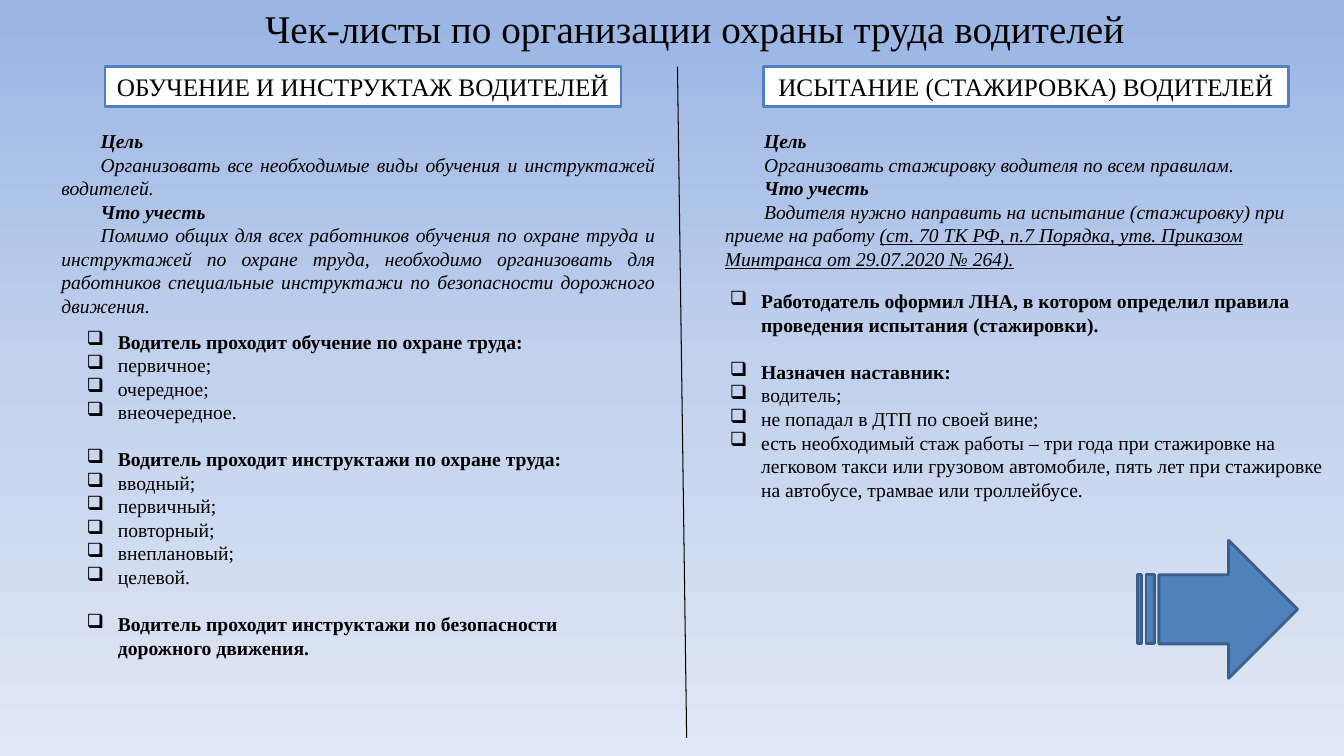
import copy

import pptx
import pptx.dml.color
import pptx.enum.shapes
import pptx.enum.text
import pptx.oxml
import pptx.oxml.ns
import pptx.util

RGBColor = pptx.dml.color.RGBColor
BLACK = RGBColor(0x00, 0x00, 0x00)
WHITE = RGBColor(0xFF, 0xFF, 0xFF)
BLUE = RGBColor(0x4F, 0x81, 0xBD)
DARK_BLUE = RGBColor(0x3A, 0x5F, 0x8C)
SKY = [(0, RGBColor(0x9A, 0xB5, 0xE4)), (0.5, RGBColor(0xC2, 0xD1, 0xED)),
       (1, RGBColor(0xE1, 0xE8, 0xF5))]

ALIGN = pptx.enum.text.PP_ALIGN
ANCHOR = pptx.enum.text.MSO_ANCHOR
SHAPE = pptx.enum.shapes.MSO_SHAPE
FONT = "Times New Roman"
WIDTH, HEIGHT = pptx.util.Inches(13.33), pptx.util.Inches(7.5)
COLUMN, ROW = WIDTH / 100, HEIGHT / 100
INDENT = pptx.util.Inches(0.39)
HANGING = pptx.util.Inches(0.31)
GROUP_GAP = pptx.util.Pt(16.8)

TITLE = "Чек-листы по организации охраны труда водителей"
TRAINING = {
    "heading": "ОБУЧЕНИЕ И ИНСТРУКТАЖ ВОДИТЕЛЕЙ",
    "heading_box": (3.98, 0, 38.4, 5.33),
    "goal_box": (0, 7.6, 45.69, 26.53),
    "checks_box": (1.88, 34.13, 43.81, 45.33),
    "align": ALIGN.JUSTIFY,
    "goal": [
        ("Цель", ""),
        ("Организовать все необходимые виды обучения и инструктажей водителей.", ""),
        ("Что учесть", ""),
        ("Помимо общих для всех работников обучения по охране труда и инструктажей "
         "по охране труда, необходимо организовать для работников "
         "специальные инструктажи по безопасности дорожного движения.", ""),
    ],
    "checks": [
        ["Водитель проходит обучение по охране труда:",
         "первичное;", "очередное;", "внеочередное."],
        ["Водитель проходит инструктажи по охране труда:", "вводный;",
         "первичный;", "повторный;", "внеплановый;", "целевой."],
        ["Водитель проходит инструктажи по безопасности дорожного движения."],
    ],
}
TRIAL = {
    "heading": "ИСЫТАНИЕ (СТАЖИРОВКА) ВОДИТЕЛЕЙ",
    "heading_box": (3.6, 0, 39.08, 5.33),
    "goal_box": (0, 7.6, 44.79, 20.13),
    "checks_box": (0.38, 28.8, 46.44, 29.6),
    "align": ALIGN.LEFT,
    "goal": [
        ("Цель", ""),
        ("Организовать стажировку водителя по всем правилам.", ""),
        ("Что учесть", ""),
        ("Водителя нужно направить на испытание (стажировку) при приеме на работу ",
         "(ст. 70 ТК РФ, п.7 Порядка, утв. Приказом Минтранса от 29.07.2020 № 264)."),
    ],
    "checks": [
        ["Работодатель оформил ЛНА, в котором определил правила "
         "проведения испытания (стажировки)."],
        ["Назначен наставник:", "водитель;", "не попадал в ДТП по своей вине;",
         "есть необходимый стаж работы – три года при стажировке на легковом такси "
         "или грузовом автомобиле, пять лет при стажировке на автобусе, трамвае "
         "или троллейбусе."],
    ],
}


def place(box, origin=(0, 0)):
    """Turn a box in grid columns and rows into slide lengths."""
    left, top, width, height = box
    return (round((origin[0] + left) * COLUMN), round((origin[1] + top) * ROW),
            round(width * COLUMN), round(height * ROW))


def apply(target, values):
    """Set every attribute named in a dict."""
    for name, value in values.items():
        setattr(target, name, value)


def add_span(para, text, size, **values):
    """Add a formatted run to a paragraph."""
    span = para.add_run()
    span.text = text
    apply(span.font, {"name": FONT, "size": pptx.util.Pt(size), **values})
    span.font.color.rgb = BLACK


def next_para(frame, index):
    """Return the first paragraph of a frame or a new one."""
    return frame.add_paragraph() if index else frame.paragraphs[0]


def add_panel_shape(page, kind, box, fill, line, origin=(0, 0)):
    """Add a flat shape with a fill and an outline."""
    shape = page.shapes.add_shape(kind, *place(box, origin))
    shape.shadow.inherit = False
    shape.fill.solid()
    shape.fill.fore_color.rgb = fill
    shape.line.color.rgb = line
    shape.line.width = pptx.util.Pt(2)
    return shape


def add_background(page):
    """Fill the page with a three-stop vertical gradient."""
    fill = page.background.fill
    fill.gradient()
    fill.gradient_angle = 270
    last = page.background._cSld.find(".//" + pptx.oxml.ns.qn("a:gsLst"))[-1]
    last.addprevious(copy.deepcopy(last))
    for stop, (position, color) in zip(fill.gradient_stops, SKY):
        stop.position = position
        stop.color.rgb = color


def add_title(page, box):
    """Move the title placeholder to its box and format it."""
    title = page.shapes.title
    apply(title, dict(zip(("left", "top", "width", "height"), place(box))))
    apply(title.text_frame, {"word_wrap": True, "vertical_anchor": ANCHOR.MIDDLE,
                             "auto_size": pptx.enum.text.MSO_AUTO_SIZE.NONE})
    para = title.text_frame.paragraphs[0]
    para.alignment = ALIGN.CENTER
    add_span(para, TITLE, 28)


def add_divider(page, start, end):
    """Draw the thin line between the two checklists."""
    line = page.shapes.add_connector(
        pptx.enum.shapes.MSO_CONNECTOR.STRAIGHT, *place((*start, *end)))
    line.line.color.rgb = BLACK
    line.line.width = pptx.util.Pt(0.75)
    line._element.spPr.append(pptx.oxml.parse_xml(
        "<a:effectLst %s/>" % pptx.oxml.ns.nsdecls("a")))


def add_heading(page, origin, panel):
    """Add the framed heading of a checklist."""
    shape = add_panel_shape(page, SHAPE.RECTANGLE, panel["heading_box"], WHITE, BLUE, origin)
    shape.text_frame.word_wrap = True
    para = shape.text_frame.paragraphs[0]
    para.alignment = ALIGN.CENTER
    add_span(para, panel["heading"], 18)


def add_goal(page, origin, panel):
    """Add the italic goal text, its labels in bold."""
    frame = page.shapes.add_textbox(*place(panel["goal_box"], origin)).text_frame
    frame.word_wrap = True
    for index, (text, reference) in enumerate(panel["goal"]):
        para = next_para(frame, index)
        para.alignment = panel["align"]
        para._p.get_or_add_pPr().set("indent", str(INDENT))
        add_span(para, text, 14, bold=index % 2 == 0, italic=True)
        if reference:
            add_span(para, reference, 14, italic=True, underline=True)


def add_checks(page, origin, panel):
    """Add groups of checkbox items, each led by a bold item."""
    frame = page.shapes.add_textbox(*place(panel["checks_box"], origin)).text_frame
    frame.word_wrap = True
    items = [(text, place_in_group == 0) for group in panel["checks"]
             for place_in_group, text in enumerate(group)]
    for index, (text, leads) in enumerate(items):
        para = next_para(frame, index)
        if leads and index:
            para.space_before = GROUP_GAP
        properties = para._p.get_or_add_pPr()
        properties.set("marL", str(HANGING))
        properties.set("indent", str(-HANGING))
        properties.append(pptx.oxml.parse_xml(
            '<a:buChar %s char="❑"/>' % pptx.oxml.ns.nsdecls("a")))
        add_span(para, text, 14, bold=leads)


def add_checklist(page, origin, panel):
    """Build one checklist from its top left corner."""
    for add_part in (add_heading, add_goal, add_checks):
        add_part(page, origin, panel)


def main():
    """Build the slide and save it."""
    deck = pptx.Presentation()
    apply(deck, {"slide_width": WIDTH, "slide_height": HEIGHT})
    page = deck.slides.add_slide(deck.slide_layouts.get_by_name("Title Only"))
    add_background(page)
    add_title(page, (12.6, -0.13, 78.17, 7.6))
    add_divider(page, (50.41, 8.8), (51.09, 97.6))
    add_checklist(page, (3.83, 8.8), TRAINING)
    add_checklist(page, (53.19, 8.8), TRIAL)
    add_panel_shape(page, SHAPE.STRIPED_RIGHT_ARROW, (84.62, 71.47, 11.93, 18.27), BLUE, DARK_BLUE)
    deck.save("out.pptx")


if __name__ == "__main__":
    main()
